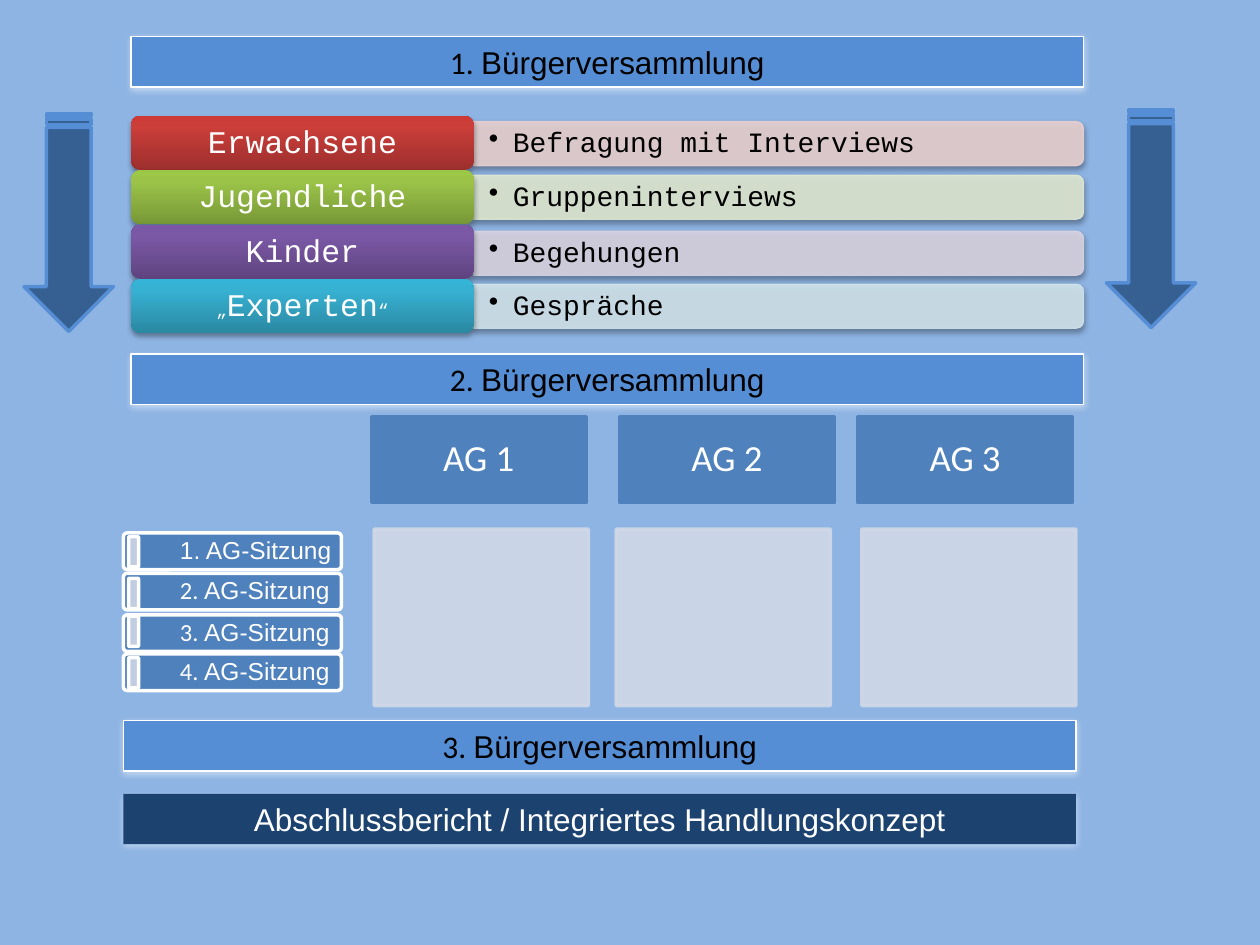
from copy import deepcopy

from lxml.etree import SubElement
from pptx import Presentation
from pptx.dml.color import RGBColor
from pptx.enum.shapes import MSO_SHAPE as Form
from pptx.enum.text import MSO_ANCHOR as Anchor, PP_ALIGN as Align
from pptx.oxml.ns import qn
from pptx.util import Inches, Pt

rgb = RGBColor.from_string
SANS, BODY, MONO = "Arial", "Calibri", "Courier New"
WHITE, BLACK, BLUE, BAR = "FFFFFF", "000000", "4F81BD", "558ED5"
# The slide is a grid of 100 columns and 75 rows of square cells.
CELL = Inches(0.1)

deck = Presentation()
deck.slide_width, deck.slide_height = 100 * CELL, 75 * CELL
slide = deck.slides.add_slide(deck.slide_layouts[6])
slide.background.fill.solid()
slide.background.fill.fore_color.rgb = rgb("8EB4E3")


def draw(form, box, fill, line=None, width=2, alpha=None, shadow=None, turn=0):
    """Add a shape; box is in cells, a list as fill is a gradient from the bottom
    up, and shadow is (colour, percent, blur, distance)."""
    shape = slide.shapes.add_shape(form, *(round(cells * CELL) for cells in box))
    shape.rotation = turn
    shape.shadow.inherit = False
    if isinstance(fill, list):
        shape.fill.gradient()
        shape.fill.gradient_angle = 90
        stops = shape._element.spPr.find(".//" + qn("a:gsLst"))
        stops.insert(1, deepcopy(stops[0]))
        for stop, position, tone in zip(shape.fill.gradient_stops, (0, 0.8, 1), fill):
            stop.position = position
            stop.color.rgb = rgb(tone)
    else:
        shape.fill.solid()
        shape.fill.fore_color.rgb = rgb(fill)
    if line:
        shape.line.color.rgb = rgb(line)
        shape.line.width = Pt(width)
    else:
        shape.line.fill.background()
    if alpha:
        for tone in shape._element.spPr.iter(qn("a:srgbClr")):
            SubElement(tone, qn("a:alpha"), val=str(alpha * 1000))
    if shadow:
        tone, percent, blur, distance = shadow
        effects = shape._element.spPr.find(qn("a:effectLst"))
        cast = SubElement(effects, qn("a:outerShdw"), blurRad=str(Pt(blur)),
                          dist=str(Pt(distance)), dir="5400000", rotWithShape="0")
        cast_tone = SubElement(cast, qn("a:srgbClr"), val=tone)
        SubElement(cast_tone, qn("a:alpha"), val=str(percent * 1000))
    return shape


def write(shape, runs, color, align=Align.CENTER, spacing=0.9, **margins):
    """Fill a shape with one line made of (text, size, font) runs."""
    frame = shape.text_frame
    layout = {"word_wrap": True, "vertical_anchor": Anchor.MIDDLE}
    layout.update({f"margin_{side}": Inches(inset) for side, inset in margins.items()})
    for name, value in layout.items():
        setattr(frame, name, value)
    line = frame.paragraphs[0]
    line.alignment, line.line_spacing = align, spacing
    for text, size, font in runs:
        run = line.add_run()
        run.text = text
        for name, value in {"size": Pt(size), "name": font}.items():
            setattr(run.font, name, value)
        run.font.color.rgb = rgb(color)
    return line


# Working group sessions
for number, top, tab_top in ((1, 42.3, 42.6), (2, 45.5, 45.9),
                             (3, 48.8, 48.9), (4, 51.9, 52.2)):
    session = draw(Form.ROUNDED_RECTANGLE, (9.8, top, 17.3, 2.9), BLUE, WHITE)
    tab = draw(Form.ROUNDED_RECTANGLE, (10.2, tab_top, 0.8, 2.4), "C2CDE1", WHITE)
    session.adjustments[0] = tab.adjustments[0] = 0.1
    number_font = SANS if number == 1 else BODY
    write(session, [(f"{number}. ", 14, number_font), ("AG-Sitzung", 14, SANS)],
          WHITE, Align.LEFT, left=0.44, right=0, top=0.06, bottom=0.06)

# Working groups, each a heading over an empty panel
for number, left, panel_left in ((1, 29.5, 29.7), (2, 49.2, 48.9), (3, 68.1, 68.4)):
    heading = draw(Form.RECTANGLE, (left, 33.1, 17, 6.8), BLUE, BLUE)
    write(heading, [(f"AG {number}", 21, BODY)], WHITE)
    draw(Form.RECTANGLE, (panel_left, 42, 17, 14), "D0D8E8", "D0D8E8", alpha=90)

# Assemblies and final report
HALO = (WHITE, 45, 4, 1)
for number, left, top in ((1, 10.4, 2.9), (2, 10.4, 28.1), (3, 9.8, 57.2)):
    assembly = draw(Form.RECTANGLE, (left, top, 75.6, 4), BAR, WHITE, 0.75, shadow=HALO)
    write(assembly, [(f"{number}. ", 18, BODY), ("Bürgerversammlung", 18, SANS)],
          BLACK, spacing=1.0)
report = draw(Form.RECTANGLE, (9.8, 63, 75.6, 4), "1C4270", shadow=HALO)
write(report, [("Abschlussbericht / Integriertes Handlungskonzept", 18, SANS)],
      WHITE, spacing=1.0)

# Target groups and how each one is heard
DROP = (BLACK, 35, 3.1, 1.8)
BAND_LEFT, BAND_LENGTH, BAND_HEIGHT = 37.6, 48.4, 3.5
groups = [
    ([("Erwachsene", 18, MONO)], "Befragung mit Interviews", 11.4,
     "E8D0D0", ["9C2F2D", "CB3E3A", "CE3B37"]),
    ([("Jugendliche", 18, MONO)], "Gruppeninterviews", 15.65,
     "DEE7D1", ["779737", "9BC348", "9DC746"]),
    ([("Kinder", 18, MONO)], "Begehungen", 20.1,
     "D8D3E0", ["5F4480", "7B58A6", "7C57A8"]),
    ([("„", 10, MONO), ("Experten", 18, MONO), ("“", 10, MONO)], "Gespräche", 24.3,
     "D0E3EA", ["2A88A2", "37B1D2", "34B4D6"]),
]
for row, (group, method, middle, tint, shades) in enumerate(groups):
    upright = (BAND_LEFT + (BAND_LENGTH - BAND_HEIGHT) / 2, middle - BAND_LENGTH / 2,
               BAND_HEIGHT, BAND_LENGTH)
    draw(Form.ROUND_2_SAME_RECTANGLE, upright, tint, tint, 0.75, 90, DROP, turn=90)
    text_area = (BAND_LEFT, middle - 1.55, 48.2, 3.1)
    caption = slide.shapes.add_textbox(*(round(cells * CELL) for cells in text_area))
    item = write(caption, [(method, 16, MONO)], BLACK, Align.LEFT,
                 left=0.12, right=0.12, top=0.12, bottom=0.12)
    item.level = 1
    bullet = item._p.get_or_add_pPr()
    bullet.set("marL", str(Inches(0.19)))
    bullet.set("indent", str(Inches(-0.19)))
    SubElement(bullet, qn("a:buChar"), char="•")
    pill = draw(Form.ROUNDED_RECTANGLE, (10.4, 9.2 + 4.32 * row, 27.2, 4.3), shades,
                shadow=DROP)
    write(pill, group, WHITE)

# Direction of the process on both sides
for left, top in ((-3.2, 14.1), (82.7, 13.8)):
    draw(Form.STRIPED_RIGHT_ARROW, (left, top, 17.3, 7.1), "376092", BAR, turn=90)

deck.save("out.pptx")
